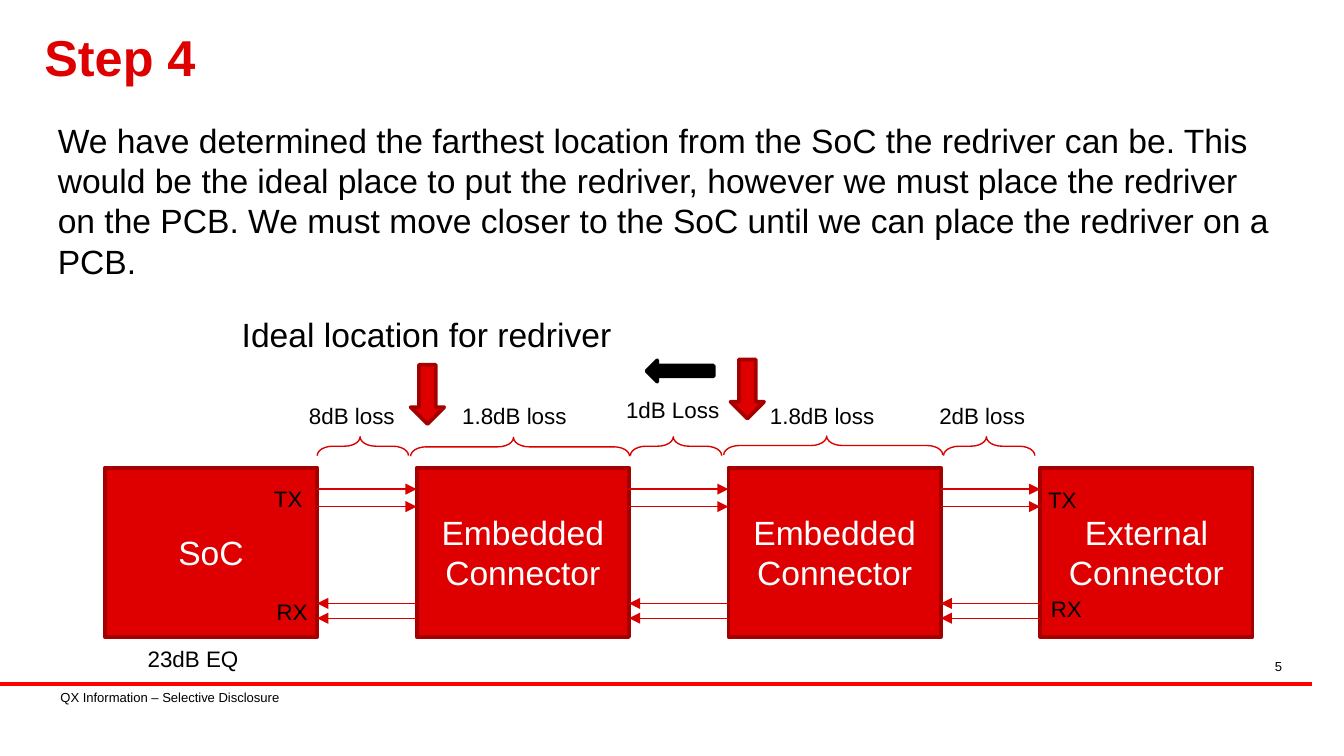
"""Build the Step 4 slide on placing a redriver along a lossy link."""
import lxml.etree
import pptx
import pptx.dml.color
import pptx.enum.shapes
import pptx.enum.text
import pptx.oxml.ns
import pptx.shapes.connector
import pptx.util

Inches = pptx.util.Inches
SHAPE = pptx.enum.shapes.MSO_SHAPE
ALIGN = pptx.enum.text.PP_ALIGN
ANCHOR = pptx.enum.text.MSO_ANCHOR
qn = pptx.oxml.ns.qn

THEME = {
    "font": "Arial",
    "red": "DE0000", "edge": "A40000", "signal": "D90000", "rule": "FF0000",
    "black": "000000", "white": "FFFFFF",
    "title": 27, "body": 18, "label": 12, "small": 7,
}


def write(holder, text, size, color="black", align=ALIGN.LEFT, bold=False, **frame_format):
    frame = holder.text_frame
    frame.text = text
    frame_values = {"auto_size": pptx.enum.text.MSO_AUTO_SIZE.NONE, "word_wrap": True}
    for attribute, value in {**frame_values, **frame_format}.items():
        setattr(frame, attribute, value)
    font_values = {"name": THEME["font"], "size": pptx.util.Pt(THEME[size]), "bold": bold}
    for paragraph in frame.paragraphs:
        paragraph.alignment = align
        for run in paragraph.runs:
            for attribute, value in font_values.items():
                setattr(run.font, attribute, value)
            run.font.color.rgb = pptx.dml.color.RGBColor.from_string(THEME[color])


def paint(item, edge, width, fill=None):
    item.line.color.rgb = pptx.dml.color.RGBColor.from_string(THEME[edge])
    item.line.width = pptx.util.Pt(width)
    if isinstance(item, pptx.shapes.connector.Connector):
        lxml.etree.SubElement(item._element.spPr, qn("a:effectLst"))
        return
    item.shadow.inherit = False
    if fill:
        item.fill.solid()
        item.fill.fore_color.rgb = pptx.dml.color.RGBColor.from_string(THEME[fill])
    else:
        item.fill.background()


deck = pptx.Presentation()
deck.slide_width = Inches(10)
deck.slide_height = deck.slide_width * 9 // 16
slide = deck.slides.add_slide(deck.slide_layouts[1])
shapes = slide.shapes
straight = pptx.enum.shapes.MSO_CONNECTOR.STRAIGHT
margins = {"margin_left": Inches(0.08), "margin_right": Inches(0.08),
           "margin_top": Inches(0.04), "margin_bottom": Inches(0.04)}

footer_rule = shapes.add_connector(straight, 0, Inches(5.09), Inches(9.76), Inches(5.09))
paint(footer_rule, "rule", 2.25)

title, explanation = shapes.title, slide.placeholders[1]
for placeholder, place in ((title, (0.25, 0.12, 9.25, 0.67)),
                           (explanation, (0.35, 0.85, 9.26, 1.37))):
    for attribute, value in zip(("left", "top", "width", "height"), place):
        setattr(placeholder, attribute, Inches(value))

write(title, "Step 4", "title", "red", bold=True, vertical_anchor=ANCHOR.MIDDLE, **margins)
title.text_frame.paragraphs[0].line_spacing = 0.85
write(explanation,
      "We have determined the farthest location from the SoC the redriver can be. "
      "This would be the ideal place to put the redriver, however we must place the "
      "redriver on the PCB. We must move closer to the SoC until we can place the "
      "redriver on a PCB.", "body", vertical_anchor=ANCHOR.TOP, **margins)
explanation_paragraph = explanation.text_frame.paragraphs[0]
explanation_paragraph.space_before = pptx.util.Pt(0)
explanation_format = explanation_paragraph._p.get_or_add_pPr()
for attribute in ("marL", "indent"):
    explanation_format.set(attribute, "0")
lxml.etree.SubElement(explanation_format, qn("a:buNone"))

for text, place, align in (
    ("QX Information – Selective Disclosure", (0.37, 5.09, 2.31, 0.2), ALIGN.LEFT),
    ("5", (7.29, 4.86, 2.33, 0.17), ALIGN.RIGHT),
):
    write(shapes.add_textbox(*map(Inches, place)), text, "small", align=align, **margins)

first_left, pitch, block_width = 0.78, 2.32, 1.58
stages = ("SoC", "Embedded\nConnector", "Embedded\nConnector", "External\nConnector")
for index, stage in enumerate(stages):
    left = first_left + index * pitch
    block = shapes.add_shape(SHAPE.RECTANGLE, *map(Inches, (left, 3.48, block_width, 1.26)))
    paint(block, "edge", 2, "red")
    write(block, stage, "body", "white", ALIGN.CENTER, vertical_anchor=ANCHOR.MIDDLE)

for index in range(len(stages) - 1):
    near = first_left + index * pitch + block_width
    far = first_left + (index + 1) * pitch
    for start, end, height in ((near, far, 3.64), (near, far, 3.77),
                               (far, near, 4.49), (far, near, 4.6)):
        signal = shapes.add_connector(straight, *map(Inches, (start, height, end, height)))
        paint(signal, "signal", 0.75)
        lxml.etree.SubElement(signal.line._get_or_add_ln(), qn("a:tailEnd"), type="triangle")

for left, top, span in ((2.63, 2.98, 0.68), (4.96, 2.98, 0.68), (7.29, 2.98, 0.68),
                        (3.8, 2.51, 1.63), (6.13, 2.5, 1.63)):
    brace = shapes.add_shape(SHAPE.RIGHT_BRACE, *map(Inches, (left, top, 0.14, span)))
    brace.rotation = 270
    brace.adjustments[0], brace.adjustments[1] = 0.83, 0.47
    paint(brace, "signal", 0.75)

for text, left, top, width in (
    ("8dB loss", 2.2, 2.94, 0.85), ("1.8dB loss", 3.34, 2.94, 0.99),
    ("1dB Loss", 4.56, 2.9, 0.9), ("1.8dB loss", 5.63, 2.94, 0.99),
    ("2dB loss", 6.89, 2.94, 0.85), ("TX", 1.94, 3.56, 0.42),
    ("RX", 1.96, 4.4, 0.44), ("TX", 7.7, 3.57, 0.42),
    ("RX", 7.72, 4.38, 0.44), ("23dB EQ", 1, 4.75, 0.99),
):
    label = shapes.add_textbox(*map(Inches, (left, top, width, 0.3)))
    write(label, text, "label", word_wrap=False)

ideal_location = shapes.add_textbox(*map(Inches, (1.7, 2.29, 2.98, 0.4)))
write(ideal_location, "Ideal location for redriver", "body", word_wrap=False)

for place, rotation, fill, edge in (
    ((2.96, 2.81, 0.44, 0.25), 90, "red", "edge"),
    ((4.81, 2.68, 0.5, 0.16), 180, "black", "black"),
    ((5.34, 2.77, 0.44, 0.25), 90, "red", "edge"),
):
    pointer = shapes.add_shape(SHAPE.RIGHT_ARROW, *map(Inches, place))
    pointer.rotation = rotation
    paint(pointer, edge, 2, fill)

deck.save("out.pptx")
